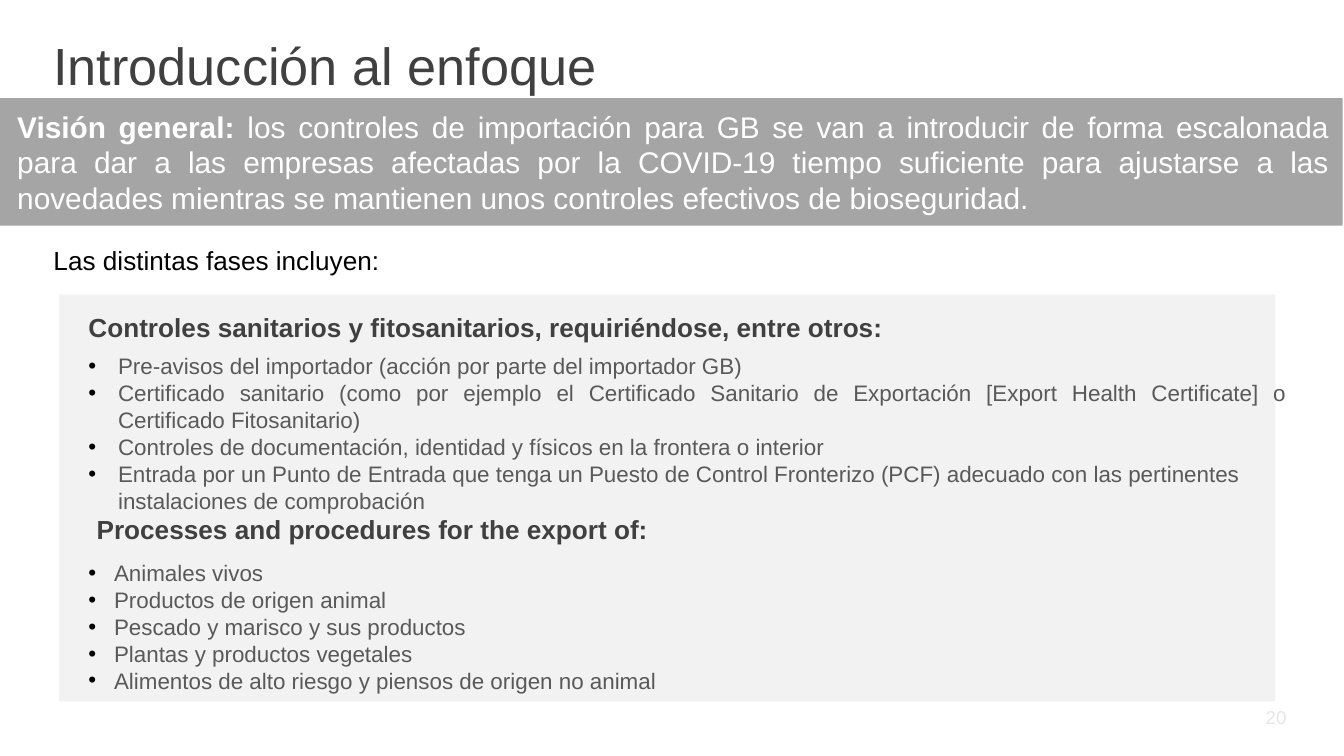
from dataclasses import dataclass

from lxml.etree import SubElement
from pptx import Presentation
from pptx.dml.color import RGBColor as RGB
from pptx.enum.shapes import MSO_SHAPE as SHAPE
from pptx.enum.text import MSO_ANCHOR as ANCHOR, PP_ALIGN as ALIGN
from pptx.oxml.ns import qn
from pptx.util import Emu, Pt

PX = 9144  # EMU per px, 100 px to the inch


@dataclass(frozen=True)
class Theme:
    face: str = "Arial"
    ink: str = "404040"
    body: str = "595959"
    black: str = "000000"
    white: str = "FFFFFF"
    panel: str = "F2F2F2"
    band: str = "A5A5A5"
    pale: str = "E7E6E6"
    title: int = 28
    lead: int = 16
    head: int = 14
    text: int = 12
    small: int = 10


T = Theme()


def px(*vals):
    return [Emu(v * PX) for v in vals]


def style(par, size, color, bold=False, align=ALIGN.LEFT):
    par.alignment = align
    font = par.font
    font.name, font.size, font.bold = T.face, Pt(size), bold
    font.color.rgb = RGB.from_string(color)


def indent(par, left, hang=0):
    props = par._p.get_or_add_pPr()
    props.set("marL", str(left * PX))
    props.set("indent", str(-hang * PX))
    return props


def bullet(par, left, hang):
    props = indent(par, left, hang)
    tint = SubElement(props, qn("a:buClr"))
    SubElement(tint, qn("a:srgbClr"), val=T.black)
    SubElement(props, qn("a:buFont"), typeface=T.face)
    SubElement(props, qn("a:buChar"), char="•")


def block(slide, box, color):
    shape = slide.shapes.add_shape(SHAPE.RECTANGLE, *px(*box))
    shape.shadow.inherit = False
    shape.fill.solid()
    shape.fill.fore_color.rgb = RGB.from_string(color)
    shape.line.fill.background()
    return shape


def frame(slide, box):
    text = slide.shapes.add_textbox(*px(*box)).text_frame
    text.word_wrap = True
    return text


def label(slide, box, words, *look, **more):
    par = frame(slide, box).paragraphs[0]
    par.text = words
    style(par, *look, **more)


def banner(slide, box, lead, rest):
    text = block(slide, box, T.band).text_frame
    text.word_wrap = True
    text.vertical_anchor = ANCHOR.MIDDLE
    par = text.paragraphs[0]
    indent(par, 3)
    style(par, T.lead, T.white, align=ALIGN.JUSTIFY)
    for words, bold in ((lead, True), (rest, False)):
        run = par.add_run()
        run.text, run.font.bold = words, bold


def phases(slide, box, head, checks, mid, goods):
    x, y, w, h = box
    block(slide, box, T.panel)

    # Heading and both lists
    text = frame(slide, (x + 9, y + 8, w + 10, h + 18))
    par = text.paragraphs[0]
    par.text = head
    par.space_after = Pt(5)
    indent(par, 3)
    style(par, T.head, T.ink, True, ALIGN.JUSTIFY)
    for items, left, hang in ((checks, 25, 22), (goods, 22, 19)):
        for item in items:
            par = text.add_paragraph()
            par.text = item
            last = item == checks[-1]
            if last:
                par.space_after = Pt(24.4)  # room for the second heading
            bullet(par, left, hang)
            style(par, T.text, T.body,
                  align=ALIGN.LEFT if last else ALIGN.JUSTIFY)

    # Second heading, in the gap between the lists
    label(slide, (x + 18, y + 158, 499, 34), mid, T.head, T.ink, True)


def main():
    deck = Presentation()
    deck.slide_width = Emu(1000 * PX)
    deck.slide_height = Emu(deck.slide_width * 9 // 16)
    slide = deck.slides.add_slide(deck.slide_layouts[6])

    # Panel with the phases
    phases(
        slide, (44, 219, 905, 303),
        "Controles sanitarios y fitosanitarios, requiriéndose, entre otros:",
        [
            "Pre-avisos del importador (acción por parte del importador GB)",
            "Certificado sanitario (como por ejemplo el Certificado Sanitario "
            "de Exportación [Export Health Certificate] o Certificado "
            "Fitosanitario)",
            "Controles de documentación, identidad y físicos en la frontera "
            "o interior",
            "Entrada por un Punto de Entrada que tenga un Puesto de Control "
            "Fronterizo (PCF) adecuado con las pertinentes instalaciones de "
            "comprobación",
        ],
        "Processes and procedures for the export of:",
        [
            "Animales vivos",
            "Productos de origen animal",
            "Pescado y marisco y sus productos",
            "Plantas y productos vegetales",
            "Alimentos de alto riesgo y piensos de origen no animal",
        ],
    )

    # Overview band
    banner(
        slide, (0, 73, 999, 95), "Visión general:",
        " los controles de importación para GB se van a introducir de forma "
        "escalonada para dar a las empresas afectadas por la COVID-19 tiempo "
        "suficiente para ajustarse a las novedades mientras se mantienen unos "
        "controles efectivos de bioseguridad.",
    )

    # Title, lead-in and page number
    label(slide, (30, 20, 904, 40), "Introducción al enfoque", T.title, T.ink)
    label(slide, (30, 177, 300, 34), "Las distintas fases incluyen:",
          T.head, T.black)
    label(slide, (867, 520, 100, 26), "20", T.small, T.pale,
          align=ALIGN.RIGHT)

    deck.save("out.pptx")


if __name__ == "__main__":
    main()
